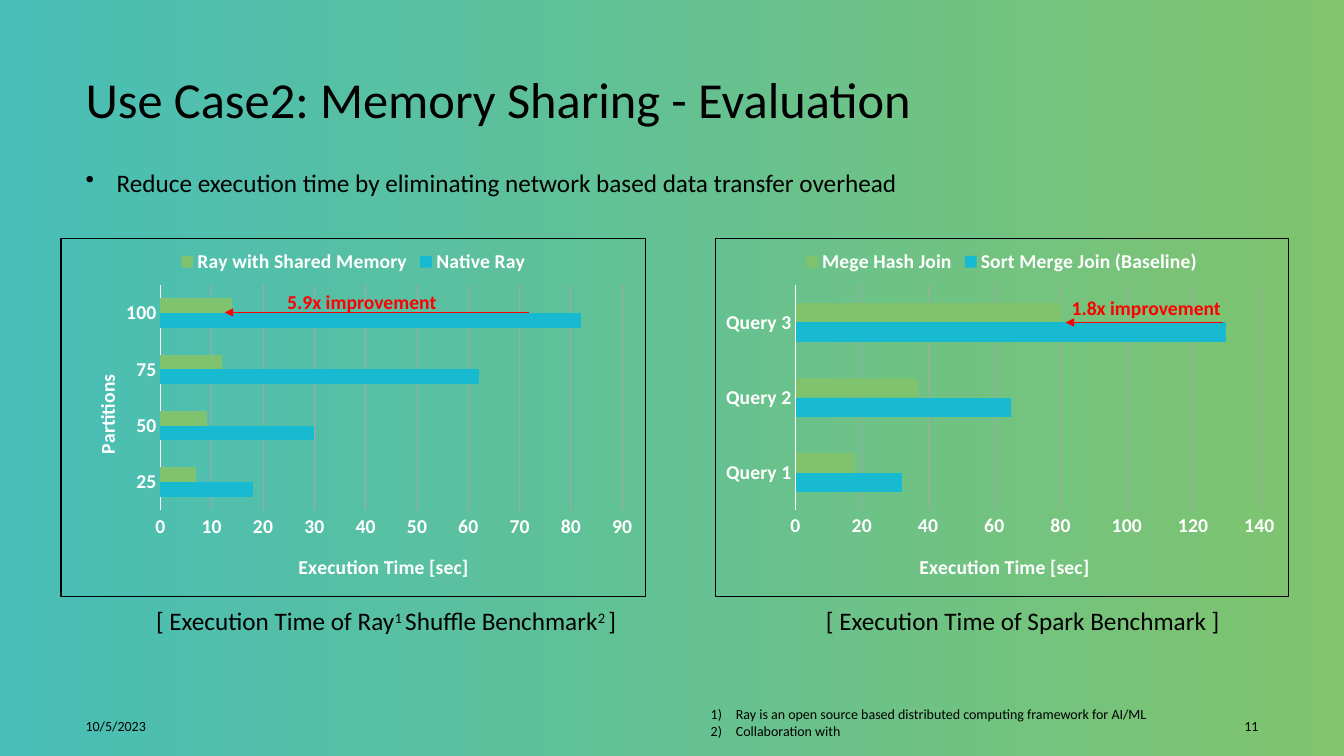
from lxml import etree
from pptx import Presentation
from pptx import util as u
from pptx.chart.data import CategoryChartData
from pptx.dml.color import RGBColor
from pptx.enum import chart as charts, shapes, text
from pptx.oxml import parse_xml
from pptx.oxml.ns import nsdecls, qn

COLORS = {"ink": "000000", "light": "FFFFFF", "alert": "FF0000", "grid": "A6A6A6",
          "teal": "48BEB7", "lime": "80C46E", "baseline": "17BAD0", "improved": "80C36E"}
FONT = "Calibri"
LEFT, RIGHT, WIDTH = 0.75, 12.58, 11.83
CHART_TOP, CHART_HEIGHT, CAPTION_TOP = 2.36, 3.56, 5.96
FOOTER_TOP, FOOTER_HEIGHT = 7.03, 0.35
TITLE = "Use Case2: Memory Sharing - Evaluation"
POINT = "Reduce execution time by eliminating network based data transfer overhead"
DATE, NUMBER = "10/5/2023", "11"
FOOTNOTES = ["Ray is an open source based distributed computing framework for AI/ML",
             "Collaboration with"]
PANELS = [
    {"left": 0.6, "width": 5.81, "categories": ["25", "50", "75", "100"],
     "series": [("Native Ray", (18, 30, 62, 82), "baseline"),
                ("Ray with Shared Memory", (7, 9, 12, 14), "improved")],
     "plot": (0.17, 0.13, 0.79, 0.63), "time_title": (0.4, 0.87),
     "category_title": ("Partitions", (0.05, 0.37)), "limit": (90, 10),
     "caption": [("[ Execution Time of Ray", False), ("1 ", True),
                 ("Shuffle Benchmark", False), ("2 ", True), ("]", False)],
     "caption_span": (0.78, 4.9), "arrow": (4.65, 1.63, 0.74),
     "gain": "5.9x improvement", "gain_at": (2.15, 0.47)},
    {"left": 7.09, "width": 5.69, "categories": ["Query 1", "Query 2", "Query 3"],
     "series": [("Sort Merge Join (Baseline)", (32, 65, 130), "baseline"),
                ("Mege Hash Join", (18, 37, 80), "improved")],
     "plot": (0.14, 0.13, 0.81, 0.63), "time_title": (0.35, 0.87),
     "category_title": None, "limit": (140, 20),
     "caption": [("[ Execution Time of Spark Benchmark ]", False)],
     "caption_span": (0.98, 4.15), "arrow": (5.04, 3.48, 0.84),
     "gain": "1.8x improvement", "gain_at": (3.44, 0.53)},
]


def rgb(name):
    return RGBColor.from_string(COLORS[name])


def style(font, size, color="ink", bold=False):
    font.name, font.size, font.bold = FONT, u.Pt(size), bold
    font.color.rgb = rgb(color)


def add_text(page, at, paragraphs, size, color="ink", bold=False, align="LEFT",
             anchor="TOP", wrap=True, bullet=None, indent=0):
    box = page.shapes.add_textbox(*map(u.Inches, at))
    frame = box.text_frame
    frame.word_wrap = wrap
    frame.vertical_anchor = text.MSO_ANCHOR[anchor]
    for index, spans in enumerate(paragraphs):
        para = frame.add_paragraph() if index else frame.paragraphs[0]
        para.alignment = text.PP_ALIGN[align]
        if bullet:
            properties = para._p.get_or_add_pPr()
            properties.set("marL", str(u.Inches(indent)))
            properties.set("indent", str(-u.Inches(indent)))
            tag, key, value = bullet
            etree.SubElement(properties, qn(tag)).set(key, value)
        style(para.font, size, color, bold)
        for words, raised in spans:
            span = para.add_run()
            span.text = words
            if raised:
                span.font._element.set("baseline", "30000")


def place(element, shares, inner=False):
    layout = element.get_or_add_layout() if hasattr(element, "get_or_add_layout") else None
    if layout is None:
        layout = element.find(qn("c:layout"))
    if layout is None:
        layout = etree.Element(qn("c:layout"))
        title_text = element.find(qn("c:tx"))
        if title_text is None:
            element.insert(0, layout)
        else:
            title_text.addnext(layout)
    for child in list(layout):
        layout.remove(child)
    manual = etree.SubElement(layout, qn("c:manualLayout"))
    if inner:
        etree.SubElement(manual, qn("c:layoutTarget")).set("val", "inner")
    for name in ("xMode", "yMode"):
        etree.SubElement(manual, qn("c:" + name)).set("val", "edge")
    for name, share in zip("xywh", shares):
        etree.SubElement(manual, qn("c:" + name)).set("val", str(share))


def title_axis(axis, words, shares):
    frame = axis.axis_title.text_frame
    frame.text = words
    style(frame.paragraphs[0].font, 14, "light", True)
    place(axis.axis_title._element, shares)


def add_bars(page, panel):
    data = CategoryChartData()
    data.categories = panel["categories"]
    for name, values, _ in panel["series"]:
        data.add_series(name, values)
    at = (panel["left"], CHART_TOP, panel["width"], CHART_HEIGHT)
    chart = page.shapes.add_chart(charts.XL_CHART_TYPE.BAR_CLUSTERED,
                                  *map(u.Inches, at), data).chart
    style(chart.font, 14, "light", True)
    chart.has_title = False
    chart.has_legend = True
    chart.legend.position = charts.XL_LEGEND_POSITION.TOP
    chart.legend.include_in_layout = False
    style(chart.legend.font, 14, "light", True)
    bars = chart.plots[0]
    bars.gap_width, bars.overlap, bars.vary_by_categories = 182, 0, False
    for series, (_, _, color) in zip(bars.series, panel["series"]):
        series.format.fill.solid()
        series.format.fill.fore_color.rgb = rgb(color)
    for axis in (chart.category_axis, chart.value_axis):
        axis.major_tick_mark = axis.minor_tick_mark = charts.XL_TICK_MARK.NONE
        style(axis.tick_labels.font, 14, "light", True)
    chart.category_axis.format.line.color.rgb = rgb("light")
    chart.category_axis.format.line.width = u.Pt(0.75)
    times = chart.value_axis
    times.format.line.fill.background()
    times.minimum_scale = 0
    times.maximum_scale, times.major_unit = panel["limit"]
    times.has_major_gridlines = True
    times.major_gridlines.format.line.color.rgb = rgb("grid")
    times.major_gridlines.format.line.width = u.Pt(0.75)
    title_axis(times, "Execution Time [sec]", panel["time_title"])
    if panel["category_title"]:
        title_axis(chart.category_axis, *panel["category_title"])
    root = chart._chartSpace
    place(root.find(".//" + qn("c:plotArea")), panel["plot"], True)
    root.find(qn("c:txPr")).addprevious(parse_xml(
        f'<c:spPr {nsdecls("c", "a")}><a:noFill/><a:ln w="{u.Pt(0.75)}"><a:solidFill>'
        f'<a:srgbClr val="{COLORS["ink"]}"/></a:solidFill></a:ln></c:spPr>'))


def add_arrow(page, panel):
    start, end, drop = panel["arrow"]
    y = CHART_TOP + drop
    arrow = page.shapes.add_connector(
        shapes.MSO_CONNECTOR.STRAIGHT,
        *map(u.Inches, (panel["left"] + start, y, panel["left"] + end, y)))
    arrow.line.color.rgb = rgb("alert")
    arrow.line.width = u.Pt(1.25)
    etree.SubElement(arrow.line._get_or_add_ln(), qn("a:tailEnd")).set("type", "triangle")
    etree.SubElement(arrow._element.spPr, qn("a:effectLst"))


def main():
    deck = Presentation()
    deck.slide_width, deck.slide_height = u.Inches(13.33), u.Inches(7.5)
    page = deck.slides.add_slide(deck.slide_layouts[6])
    fill = page.background.fill
    fill.gradient()
    fill.gradient_angle = 0
    for stop, position, color in zip(fill.gradient_stops, (0, 1), ("teal", "lime")):
        stop.position, stop.color.rgb = position, rgb(color)

    add_text(page, (LEFT, 0.43, WIDTH, 1.09), [[(TITLE, False)]], 36, anchor="MIDDLE")
    add_text(page, (LEFT, 1.61, WIDTH, 0.8), [[(POINT, False)]], 18,
             bullet=("a:buChar", "char", "•"), indent=0.31)
    add_text(page, (LEFT, FOOTER_TOP, 1.75, FOOTER_HEIGHT), [[(DATE, False)]], 10,
             anchor="MIDDLE")
    add_text(page, (RIGHT - 0.6, FOOTER_TOP, 0.6, FOOTER_HEIGHT), [[(NUMBER, False)]], 10,
             align="RIGHT", anchor="MIDDLE")
    add_text(page, (6.95, 6.95, 4.72, 0.44), [[(note, False)] for note in FOOTNOTES], 10,
             bullet=("a:buAutoNum", "type", "arabicParenR"), indent=0.25)
    for panel in PANELS:
        add_bars(page, panel)
        offset, width = panel["caption_span"]
        add_text(page, (panel["left"] + offset, CAPTION_TOP, width, 0.4),
                 [panel["caption"]], 18, align="CENTER", wrap=False)
        add_arrow(page, panel)
        across, down = panel["gain_at"]
        add_text(page, (panel["left"] + across, CHART_TOP + down, 1.69, 0.34),
                 [[(panel["gain"], False)]], 14, "alert", True, wrap=False)
    deck.save("out.pptx")


if __name__ == "__main__":
    main()
